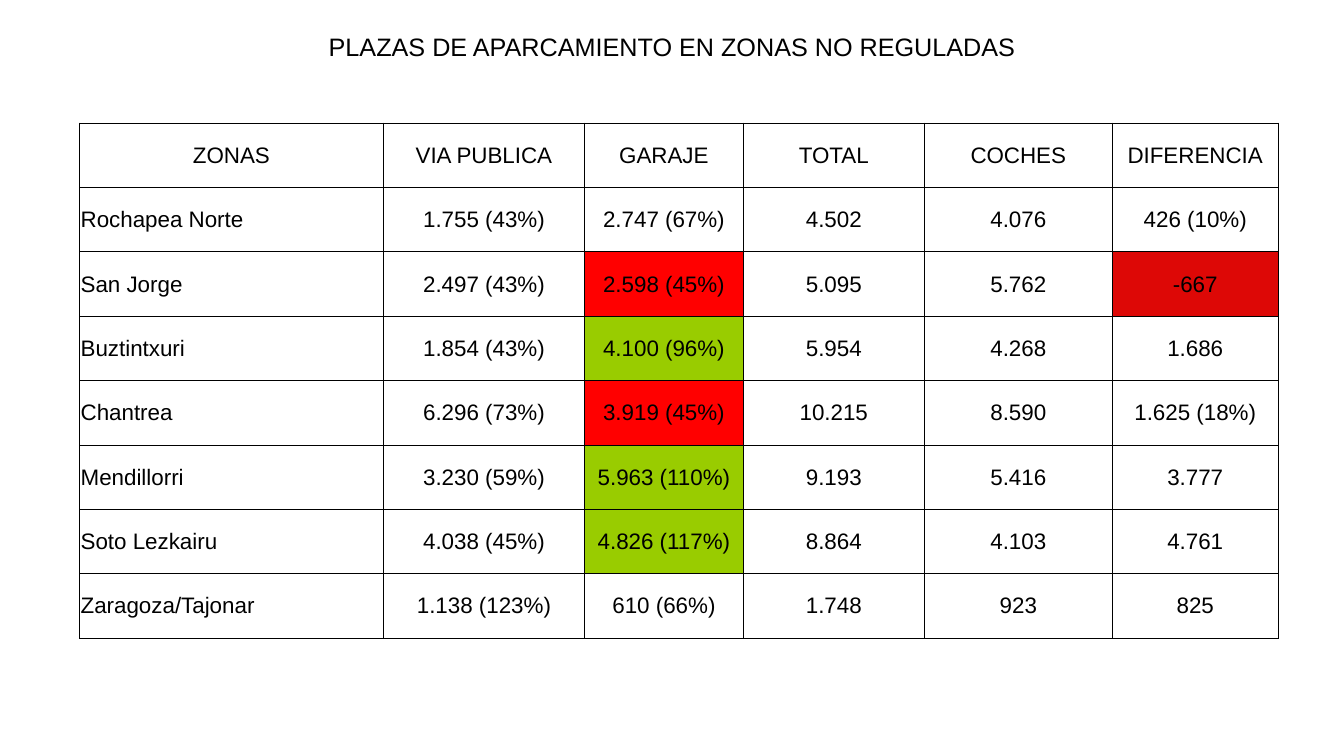
from dataclasses import dataclass

from lxml.etree import SubElement
from pptx import Presentation
from pptx.dml.color import RGBColor
from pptx.enum.text import MSO_ANCHOR as Anchor, MSO_AUTO_SIZE as AutoSize, PP_ALIGN as Align
from pptx.oxml.ns import qn
from pptx.slide import Slide
from pptx.table import _Cell as Cell
from pptx.text.text import _Paragraph as Paragraph
from pptx.util import Inches, Pt

FONT = "Arial"
COLORS = {"text": "000000", "border": "000000", "low": "FF0000", "high": "99CC00", "deficit": "DD0806"}
HEADERS = ("ZONAS", "VIA PUBLICA", "GARAJE", "TOTAL", "COCHES", "DIFERENCIA")
COL_WIDTHS = (3.01, 2, 1.57, 1.8, 1.86, 1.65)
TABLE_LEFT, TABLE_TOP, TABLE_HEIGHT = 0.79, 1.22, 5.11


@dataclass
class Zone:
    name: str
    street: str
    garage: str
    total: str
    cars: str
    difference: str
    garage_fill: str = ""
    difference_fill: str = ""

    def texts(self) -> tuple[str, ...]:
        return self.name, self.street, self.garage, self.total, self.cars, self.difference

    def fills(self) -> tuple[str, ...]:
        return "", "", self.garage_fill, "", "", self.difference_fill


ZONES = (
    Zone("Rochapea Norte", "1.755 (43%)", "2.747 (67%)", "4.502", "4.076", "426 (10%)"),
    Zone("San Jorge", "2.497 (43%)", "2.598 (45%)", "5.095", "5.762", "-667", "low", "deficit"),
    Zone("Buztintxuri", "1.854 (43%)", "4.100 (96%)", "5.954", "4.268", "1.686", "high"),
    Zone("Chantrea", "6.296 (73%)", "3.919 (45%)", "10.215", "8.590", "1.625 (18%)", "low"),
    Zone("Mendillorri", "3.230 (59%)", "5.963 (110%)", "9.193", "5.416", "3.777", "high"),
    Zone("Soto Lezkairu", "4.038 (45%)", "4.826 (117%)", "8.864", "4.103", "4.761", "high"),
    Zone("Zaragoza/Tajonar", "1.138 (123%)", "610 (66%)", "1.748", "923", "825"),
)


def add_run(p: Paragraph, text: str, size: float, align: Align) -> None:
    p.alignment = align
    r = p.add_run()
    r.text = text
    r.font.name = FONT
    r.font.size = Pt(size)
    r.font.color.rgb = RGBColor.from_string(COLORS["text"])


def add_borders(cell: Cell) -> None:
    props = cell._tc.get_or_add_tcPr()
    for side in ("a:lnL", "a:lnR", "a:lnT", "a:lnB"):
        line = SubElement(props, qn(side), w=str(Pt(0.5)))
        fill = SubElement(line, qn("a:solidFill"))
        SubElement(fill, qn("a:srgbClr"), val=COLORS["border"])


def format_cell(cell: Cell, text: str, align: Align, fill: str) -> None:
    cell.margin_left = cell.margin_right = cell.margin_top = Inches(0.01)
    cell.margin_bottom = Inches(0)
    cell.vertical_anchor = Anchor.MIDDLE
    add_borders(cell)
    if fill:
        cell.fill.solid()
        cell.fill.fore_color.rgb = RGBColor.from_string(COLORS[fill])
    else:
        cell.fill.background()
    add_run(cell.text_frame.paragraphs[0], text, 16, align)


def add_title(s: Slide) -> None:
    sp = s.shapes.title
    sp.left, sp.top, sp.width, sp.height = Inches(3.16), Inches(0.26), Inches(7.08), Inches(0.4)
    tf = sp.text_frame
    tf.word_wrap = False
    tf.auto_size = AutoSize.SHAPE_TO_FIT_TEXT
    tf.vertical_anchor = Anchor.TOP
    add_run(tf.paragraphs[0], "PLAZAS DE APARCAMIENTO EN ZONAS NO REGULADAS", 18, Align.LEFT)


def add_zone_table(s: Slide) -> None:
    rows = [(HEADERS, ("",) * len(HEADERS))] + [(z.texts(), z.fills()) for z in ZONES]
    table = s.shapes.add_table(
        len(rows), len(HEADERS), Inches(TABLE_LEFT), Inches(TABLE_TOP),
        Inches(sum(COL_WIDTHS)), Inches(TABLE_HEIGHT),
    ).table
    table.first_row = table.horz_banding = False
    for col, width in zip(table.columns, COL_WIDTHS):
        col.width = Inches(width)
    for i, (texts, fills) in enumerate(rows):
        table.rows[i].height = Inches(TABLE_HEIGHT / len(rows))
        for j, (text, fill) in enumerate(zip(texts, fills)):
            align = Align.LEFT if i and j == 0 else Align.CENTER
            format_cell(table.cell(i, j), text, align, fill)


def main() -> None:
    prs = Presentation()
    prs.slide_width, prs.slide_height = Inches(13.33), Inches(7.5)
    s = prs.slides.add_slide(prs.slide_layouts[5])
    add_title(s)
    add_zone_table(s)
    prs.save("out.pptx")


if __name__ == "__main__":
    main()
